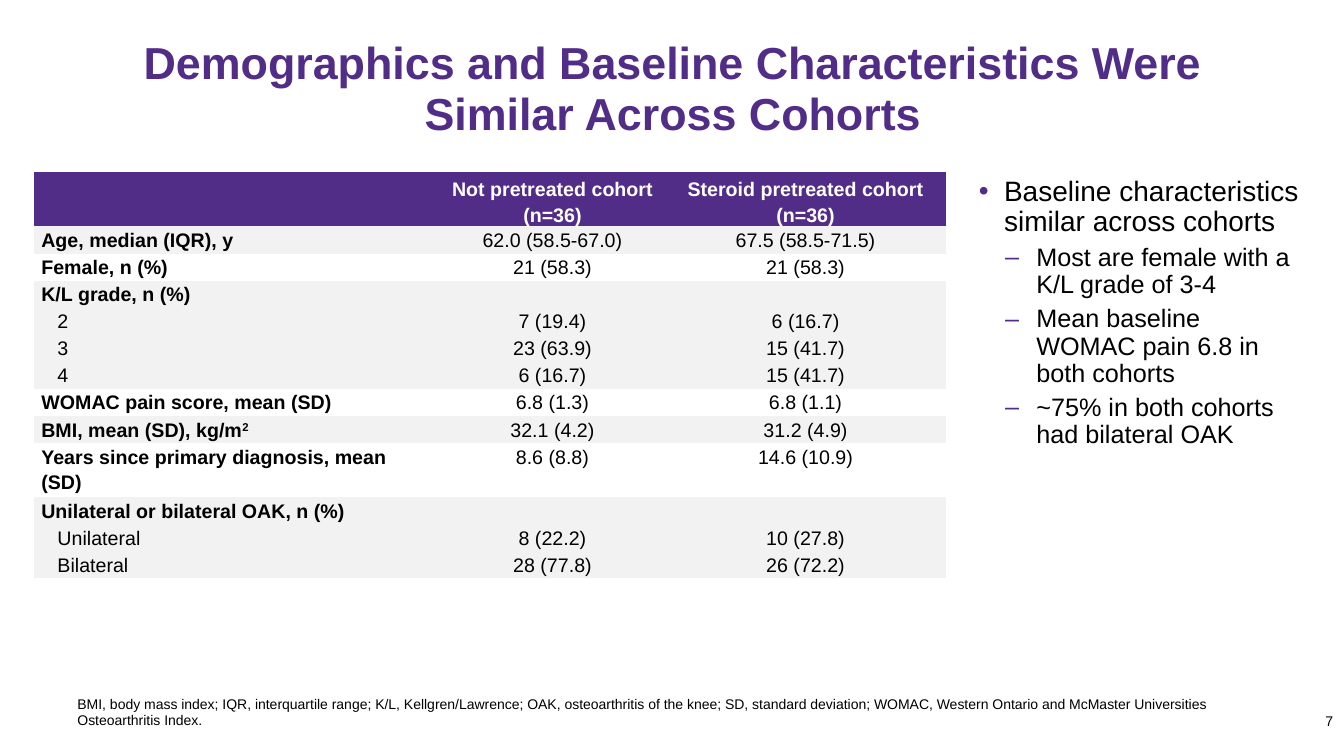
from lxml import etree
from pptx import Presentation
from pptx import util as u
from pptx.dml.color import RGBColor
from pptx.enum import text
from pptx.oxml.ns import qn

PURPLE = RGBColor(0x52, 0x2D, 0x88)
BLACK = RGBColor(0, 0, 0)
WHITE = RGBColor(0xFF, 0xFF, 0xFF)
GREY = RGBColor(0xF2, 0xF2, 0xF2)
FONT = "Arial"
ALIGN, ANCHOR = text.PP_ALIGN, text.MSO_ANCHOR

# Content: "^" starts a superscript, "\n" breaks the line
TITLE = "Demographics and Baseline Characteristics Were Similar Across Cohorts"
HEADER = ("", "Not pretreated cohort\n(n=36)", "Steroid pretreated cohort\n(n=36)")
GROUPS = [  # main row, then its sub-rows
    [("Age, median (IQR), y", "62.0 (58.5-67.0)", "67.5 (58.5-71.5)")],
    [("Female, n (%)", "21 (58.3)", "21 (58.3)")],
    [("K/L grade, n (%)", "", ""),
     ("2", "7 (19.4)", "6 (16.7)"),
     ("3", "23 (63.9)", "15 (41.7)"),
     ("4", "6 (16.7)", "15 (41.7)")],
    [("WOMAC pain score, mean (SD)", "6.8 (1.3)", "6.8 (1.1)")],
    [("BMI, mean (SD), kg/m^2", "32.1 (4.2)", "31.2 (4.9)")],
    [("Years since primary diagnosis, mean (SD)", "8.6 (8.8)", "14.6 (10.9)")],
    [("Unilateral or bilateral OAK, n (%)", "", ""),
     ("Unilateral", "8 (22.2)", "10 (27.8)"),
     ("Bilateral", "28 (77.8)", "26 (72.2)")],
]
COL_WIDTHS = (4.02, 2.24, 2.78)
ROW_HEIGHT = 0.25
BULLETS = [  # level, text
    (0, "Baseline characteristics similar across cohorts"),
    (1, "Most are female with a K/L grade of 3-4"),
    (1, "Mean baseline WOMAC pain 6.8 in both cohorts"),
    (1, "~75% in both cohorts had bilateral OAK"),
]
LEVELS = [  # mark, size, space before, left indent, hanging indent
    ("•", 20, 10, 0.25, 0.25),
    ("‒", 18, 5, 0.57, 0.31),
]
FOOTNOTE = ("BMI, body mass index; IQR, interquartile range; K/L, Kellgren/Lawrence; "
            "OAK, osteoarthritis of the knee; SD, standard deviation; WOMAC, Western "
            "Ontario and McMaster Universities Osteoarthritis Index.")
PAGE = "7"


def write(p, words, size=14, color=BLACK, bold=False, align=ALIGN.LEFT,
          spacing=None, before=0):
    p.alignment, p.line_spacing, p.space_before = align, spacing, u.Pt(before)
    base, _, raised = words.partition("^")
    for i, line in enumerate(base.split("\n")):
        if i:
            p.add_line_break()
        for part, offset in ((line, None), (raised, "30000")):
            if part:
                r = p.add_run()
                r.text = part
                r.font.name, r.font.size, r.font.bold = FONT, u.Pt(size), bold
                r.font.color.rgb = color
                if offset:
                    r.font._element.set("baseline", offset)
    if not words:  # an empty line keeps the text size
        etree.SubElement(p._p, qn("a:endParaRPr"), sz=str(size * 100))


def add_box(s, left, top, width, height, anchor=ANCHOR.BOTTOM, bottom=0.0):
    sp = s.shapes.add_textbox(*map(u.Inches, (left, top, width, height)))
    tf = sp.text_frame
    tf.word_wrap, tf.vertical_anchor = True, anchor
    tf.margin_bottom = u.Inches(bottom)
    return tf


def add_bullet(p, mark, left, hanging):
    pPr = p._p.get_or_add_pPr()
    pPr.set("marL", str(u.Inches(left)))
    pPr.set("indent", str(-u.Inches(hanging)))
    color = etree.SubElement(pPr, qn("a:buClr"))
    etree.SubElement(color, qn("a:srgbClr"), val=str(PURPLE))
    etree.SubElement(pPr, qn("a:buFont"), typeface=FONT)
    etree.SubElement(pPr, qn("a:buChar"), char=mark)


def fill_cell(cell, words, fill, left=0.07, right=0.07, anchor=ANCHOR.TOP, **fmt):
    cell.fill.solid()
    cell.fill.fore_color.rgb = fill
    cell.margin_left, cell.margin_right = u.Inches(left), u.Inches(right)
    cell.margin_top = cell.margin_bottom = 0
    cell.vertical_anchor = anchor
    write(cell.text_frame.paragraphs[0], words, spacing=1.15, **fmt)


def add_cohort_table(s):
    rows = [(row, i % 2, k > 0) for i, group in enumerate(GROUPS)
            for k, row in enumerate(group)]
    frame = s.shapes.add_table(
        len(rows) + 1, len(HEADER), u.Inches(0.34), u.Inches(1.71),
        u.Inches(sum(COL_WIDTHS)), u.Inches(ROW_HEIGHT * (len(rows) + 3)))
    table = frame.table
    table.horz_banding = False
    # Plain style without grid lines
    style = table._tbl.tblPr.find(qn("a:tableStyleId"))
    style.text = "{2D5ABB26-0587-4C30-8999-92F81FD0307C}"
    for col, width in zip(table.columns, COL_WIDTHS):
        col.width = u.Inches(width)
    for j, words in enumerate(HEADER):
        fill_cell(table.cell(0, j), words, PURPLE, anchor=ANCHOR.BOTTOM,
                  color=WHITE, bold=True, align=ALIGN.CENTER)
    for i, (row, odd, sub) in enumerate(rows, 1):
        fill = WHITE if odd else GREY
        fill_cell(table.cell(i, 0), row[0], fill, left=0.23 if sub else 0.07,
                  right=0.2, bold=not sub)
        for j in (1, 2):
            fill_cell(table.cell(i, j), row[j], fill, align=ALIGN.CENTER)
    # The header and the long label take two lines
    for i, line in enumerate(table.rows):
        two = i == 0 or rows[i - 1][0][0].startswith("Years")
        line.height = u.Inches(ROW_HEIGHT * (2 if two else 1))


def main():
    prs = Presentation()
    prs.slide_width, prs.slide_height = u.Inches(13.33), u.Inches(7.5)
    s = prs.slides.add_slide(prs.slide_layouts[6])

    # Title
    tf = add_box(s, 0.67, 0.4, 12.01, 1.03, bottom=0.05)
    write(tf.paragraphs[0], TITLE, size=32, color=PURPLE, bold=True,
          align=ALIGN.CENTER, spacing=u.Pt(36))

    # Table and key points
    add_cohort_table(s)
    tf = add_box(s, 9.61, 1.71, 3.38, 4.72, anchor=ANCHOR.TOP, bottom=0.05)
    for i, (level, words) in enumerate(BULLETS):
        p = tf.add_paragraph() if i else tf.paragraphs[0]
        mark, size, before, left, hanging = LEVELS[level]
        p.level = level
        write(p, words, size=size, spacing=0.9, before=before)
        add_bullet(p, mark, left, hanging)

    # Footnote and page number
    tf = add_box(s, 0.67, 6.96, 12.14, 0.27)
    write(tf.paragraphs[0], FOOTNOTE, size=10, before=4)
    tf = add_box(s, 12.68, 6.84, 0.64, 0.4)
    write(tf.paragraphs[0], PAGE, size=10, align=ALIGN.RIGHT)

    prs.save("out.pptx")


if __name__ == "__main__":
    main()
